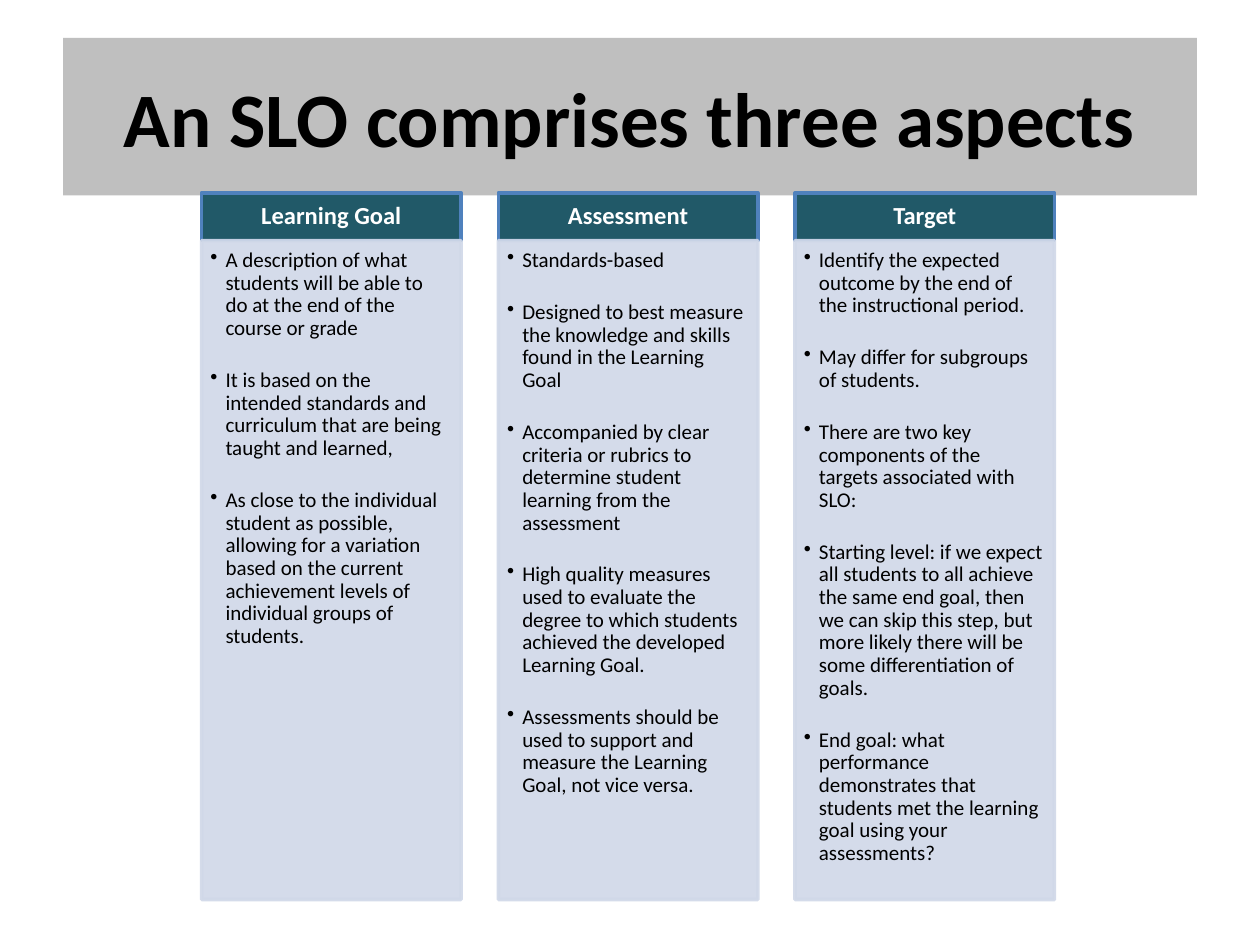
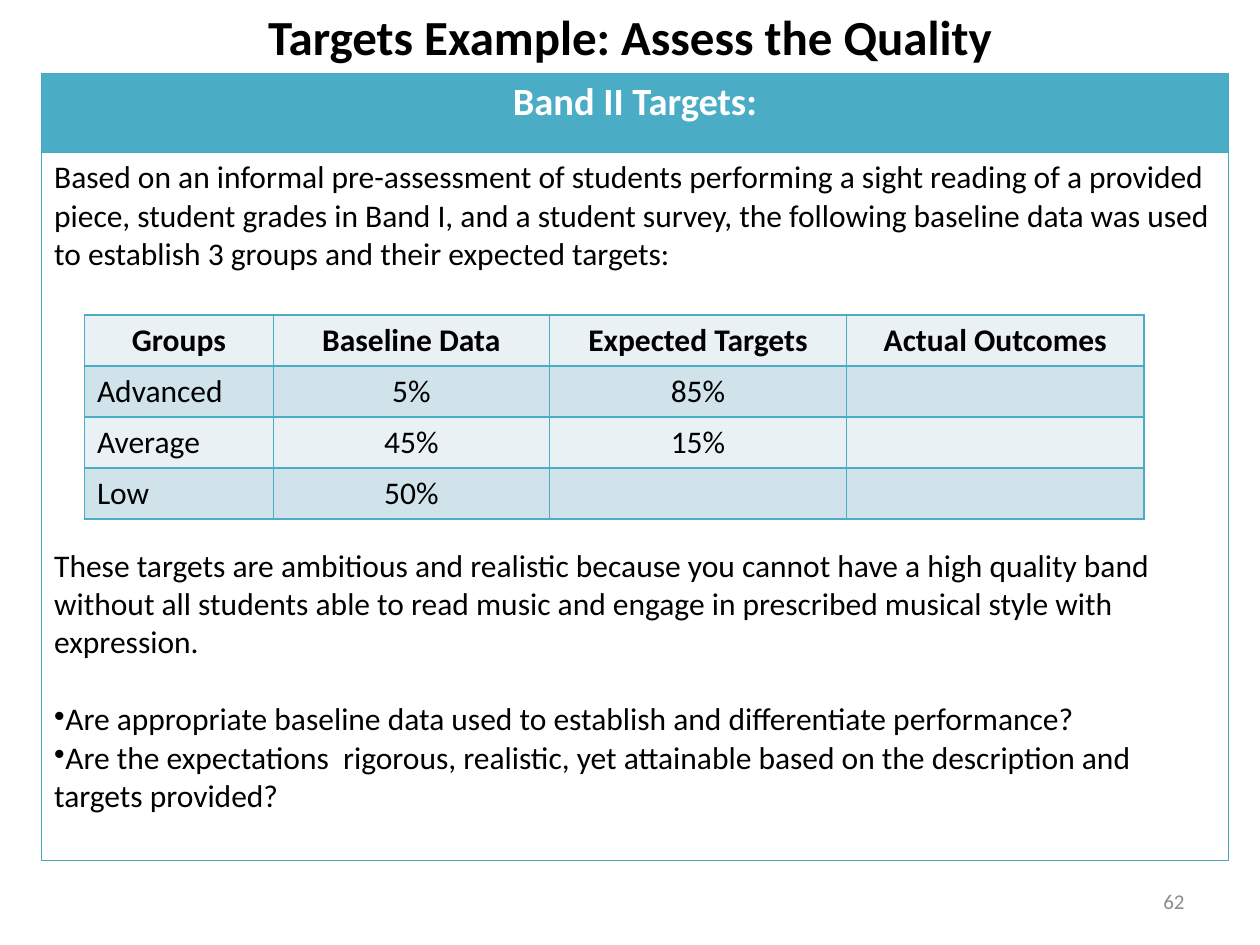
from lxml import etree
from pptx import Presentation
from pptx.dml.color import RGBColor
from pptx.enum import shapes, text
from pptx.oxml import ns
from pptx.util import Inches, Pt

FONT = "Calibri"
BLACK = RGBColor(0x00, 0x00, 0x00)
WHITE = RGBColor(0xFF, 0xFF, 0xFF)
NUMBER_GRAY = RGBColor(0x8C, 0x8C, 0x8C)
TITLE_GRAY = RGBColor(0xBF, 0xBF, 0xBF)
HEAD_TEAL = RGBColor(0x21, 0x59, 0x68)
HEAD_EDGE = RGBColor(0x4F, 0x81, 0xBD)
PANEL_BLUE = RGBColor(0xD0, 0xD8, 0xE8)
AQUA = RGBColor(0x4B, 0xAC, 0xC6)
FRAME_EDGE = RGBColor(0x46, 0xAA, 0xC5)
ROW_LIGHT = RGBColor(0xE9, 0xF1, 0xF5)
ROW_DARK = RGBColor(0xD0, 0xE3, 0xEA)

LEFT, CENTER, RIGHT = text.PP_ALIGN.LEFT, text.PP_ALIGN.CENTER, text.PP_ALIGN.RIGHT
TOP, MIDDLE = text.MSO_ANCHOR.TOP, text.MSO_ANCHOR.MIDDLE

ASPECTS = [
    ("Learning Goal", [
        "A description of what students will be able to do at the end of the course or grade",
        "It is based on the intended standards and curriculum that are being taught and learned,",
        "As close to the individual student as possible, allowing for a variation based on the "
        "current achievement levels of individual groups of students.",
    ]),
    ("Assessment", [
        "Standards-based",
        "Designed to best measure the knowledge and skills found in the Learning Goal",
        "Accompanied by clear criteria or rubrics to determine student learning from the assessment",
        "High quality measures used to evaluate the degree to which students achieved the "
        "developed Learning Goal.",
        "Assessments should be used to support and measure the Learning Goal, not vice versa.",
    ]),
    ("Target", [
        "Identify the expected outcome by the end of the instructional period.",
        "May differ for subgroups of students.",
        "There are two key components of the targets associated with SLO:",
        "Starting level: if we expect all students to all achieve the same end goal, then we can "
        "skip this step, but more likely there will be some differentiation of goals.",
        "End goal: what performance demonstrates that students met the learning goal using your "
        "assessments?",
    ]),
]

INTRO = ("Based on an informal pre-assessment of students performing a sight reading of a provided "
         "piece, student grades in Band I, and a student survey, the following baseline data was "
         "used to establish 3 groups and their expected targets:")
RATIONALE = ("These targets are ambitious and realistic because you cannot have a high quality band "
             "without all students able to read music and engage in prescribed musical style with "
             "expression.")
QUESTIONS = [
    "Are appropriate baseline data used to establish and differentiate performance?",
    "Are the expectations  rigorous, realistic, yet attainable based on the description and "
    "targets provided?",
]
GROUPS = [
    ("Groups", "Baseline Data", "Expected Targets", "Actual Outcomes"),
    ("Advanced", "5%", "85%", ""),
    ("Average", "45%", "15%", ""),
    ("Low", "50%", "", ""),
]


def write(tf, lines, size, color=BLACK, bold=False, align=LEFT):
    for i, line in enumerate(lines):
        p = tf.paragraphs[0] if i == 0 else tf.add_paragraph()
        p.text = line
        p.alignment = align
        for r in p.runs:
            r.font.name = FONT
            r.font.size = Pt(size)
            r.font.bold = bold
            r.font.color.rgb = color
    return tf.paragraphs


def set_insets(tf, left, top, right, bottom):
    tf.margin_left, tf.margin_top = Inches(left), Inches(top)
    tf.margin_right, tf.margin_bottom = Inches(right), Inches(bottom)


def add_bullet(p, indent=0):
    pPr = p._p.get_or_add_pPr()
    pPr.set("marL", str(Inches(indent)))
    pPr.set("indent", str(-Inches(indent)))
    etree.SubElement(pPr, ns.qn("a:buChar"), char="•")


def set_opacity(sp, percent):
    for clr in sp._element.spPr.iter(ns.qn("a:srgbClr")):
        etree.SubElement(clr, ns.qn("a:alpha"), val=str(percent * 1000))


def add_box(slide, box, fill, edge):
    sp = slide.shapes.add_shape(shapes.MSO_SHAPE.RECTANGLE, *map(Inches, box))
    sp.shadow.inherit = False
    sp.fill.solid()
    sp.fill.fore_color.rgb = fill
    sp.line.color.rgb = edge
    sp.line.width = Pt(2)
    sp.text_frame.word_wrap = True
    return sp


def set_title(slide, box, title, size, anchor, fill=None):
    sp = slide.shapes.title
    sp.left, sp.top, sp.width, sp.height = map(Inches, box)
    if fill is not None:
        sp.fill.solid()
        sp.fill.fore_color.rgb = fill
    tf = sp.text_frame
    tf.auto_size = text.MSO_AUTO_SIZE.NONE
    tf.vertical_anchor = anchor
    write(tf, [title], size, bold=True, align=CENTER)


def add_grid(slide, box, col_widths, row_heights, edge, edge_pt):
    rows, cols = len(row_heights), len(col_widths)
    table = slide.shapes.add_table(rows, cols, *map(Inches, box)).table
    table.first_row = table.horz_banding = False
    for col, width in zip(table.columns, col_widths):
        col.width = Inches(width)
    for row, height in zip(table.rows, row_heights):
        row.height = Inches(height)
    for cell in table.iter_cells():
        tcPr = cell._tc.get_or_add_tcPr()
        for side in ("lnL", "lnR", "lnT", "lnB"):
            ln = etree.SubElement(tcPr, ns.qn("a:" + side), w=str(Pt(edge_pt)))
            solid = etree.SubElement(ln, ns.qn("a:solidFill"))
            etree.SubElement(solid, ns.qn("a:srgbClr"), val=str(edge))
    return table


def fill_cell(cell, color):
    cell.fill.solid()
    cell.fill.fore_color.rgb = color


def add_aspect(slide, box, heading, points):
    left, top, width, height = box
    head_h = 0.38
    head = add_box(slide, (left, top, width, head_h), HEAD_TEAL, HEAD_EDGE)
    set_insets(head.text_frame, 0.11, 0.06, 0.11, 0.06)
    head.text_frame.vertical_anchor = MIDDLE
    write(head.text_frame, [heading], 14, WHITE, True, CENTER)[0].line_spacing = 0.9

    panel = add_box(slide, (left, top + head_h, width, height - head_h), PANEL_BLUE, PANEL_BLUE)
    set_opacity(panel, 90)
    tf = panel.text_frame
    set_insets(tf, 0.07, 0.07, 0.09, 0.1)
    tf.vertical_anchor = TOP
    for p in write(tf, points, 12):
        p.line_spacing = 0.9
        p.space_after = Pt(16.7)
        add_bullet(p, 0.12)


def add_targets_frame(slide, box):
    head_h = 0.63
    table = add_grid(slide, box, [box[2]], [head_h, box[3] - head_h], FRAME_EDGE, 0.75)
    head, body = table.cell(0, 0), table.cell(1, 0)
    fill_cell(head, AQUA)
    write(head.text_frame, ["Band II Targets:"], 22, WHITE, True, CENTER)
    fill_cell(body, WHITE)
    paragraphs = write(body.text_frame, [INTRO, RATIONALE] + QUESTIONS, 18)
    paragraphs[1].space_before = Pt(156)
    paragraphs[2].space_before = Pt(22)
    for p in paragraphs[2:]:
        add_bullet(p)


def add_groups_table(slide, box):
    row_h = box[3] / len(GROUPS)
    table = add_grid(slide, box, [1.5, 2.19, 2.36, 2.36], [row_h] * len(GROUPS), AQUA, 1)
    for i, row in enumerate(GROUPS):
        for j, value in enumerate(row):
            cell = table.cell(i, j)
            fill_cell(cell, ROW_DARK if i % 2 else ROW_LIGHT)
            align = LEFT if i and j == 0 else CENTER
            write(cell.text_frame, [value], 18, bold=i == 0, align=align)


def add_page_number(slide, box, number):
    tf = slide.shapes.add_textbox(*map(Inches, box)).text_frame
    tf.word_wrap = True
    tf.vertical_anchor = MIDDLE
    write(tf, [number], 12, NUMBER_GRAY, align=RIGHT)


def build_aspects_slide(prs, layout):
    slide = prs.slides.add_slide(layout)
    set_title(slide, (0.5, 0.3, 9, 1.25), "An SLO comprises three aspects", 44, MIDDLE, TITLE_GRAY)
    for i, (heading, points) in enumerate(ASPECTS):
        add_aspect(slide, (1.6 + i * 2.355, 1.53, 2.06, 5.61), heading, points)


def build_targets_slide(prs, layout):
    slide = prs.slides.add_slide(layout)
    set_title(slide, (0, 0, 10, 0.57), "Targets Example: Assess the Quality", 28, TOP)
    add_page_number(slide, (7.17, 6.95, 2.33, 0.4), "62")
    add_targets_frame(slide, (0.33, 0.58, 9.42, 6.25))
    add_groups_table(slide, (0.67, 2.5, 8.41, 1.62))


def main():
    prs = Presentation()
    prs.slide_width, prs.slide_height = Inches(10), Inches(7.5)
    layout = prs.slide_layouts[5]
    build_aspects_slide(prs, layout)
    build_targets_slide(prs, layout)
    prs.save("out.pptx")


if __name__ == "__main__":
    main()
